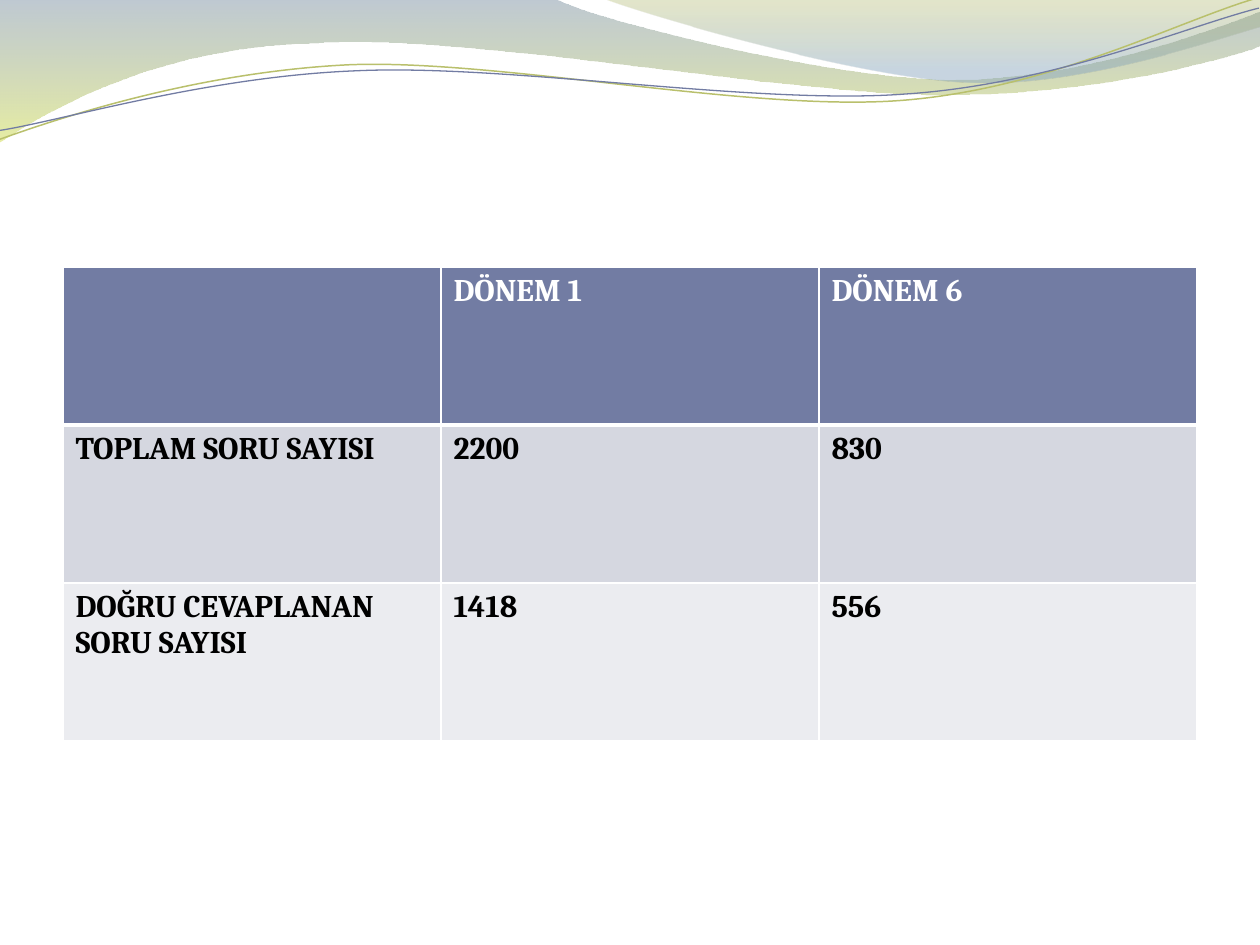
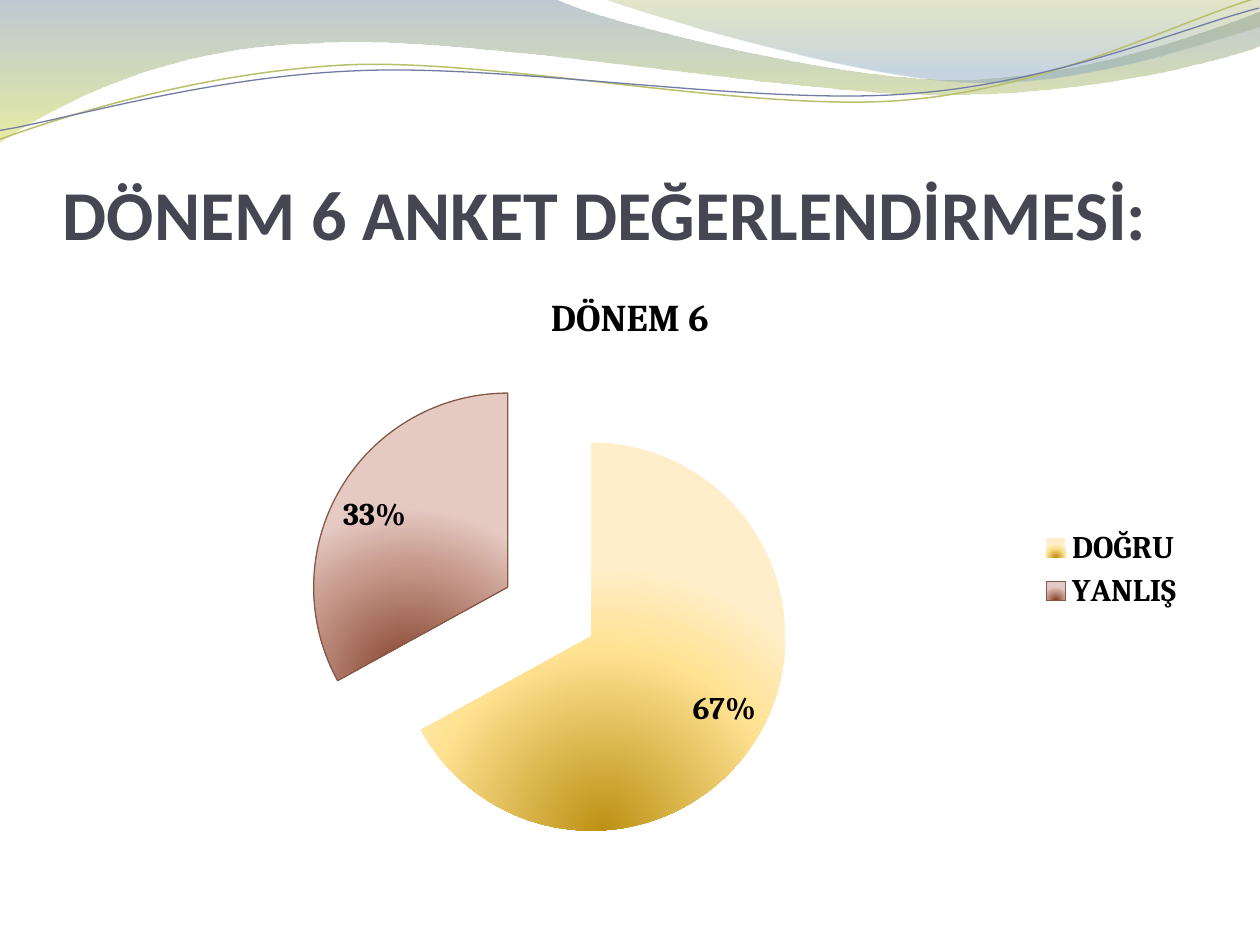
from lxml.etree import SubElement
from pptx import Presentation
from pptx.chart.data import CategoryChartData
from pptx.dml.color import RGBColor
from pptx.enum.chart import XL_CHART_TYPE, XL_LABEL_POSITION, XL_LEGEND_POSITION
from pptx.enum.text import MSO_ANCHOR
from pptx.oxml.ns import qn
from pptx.util import Inches, Pt

COLORS = {
    "white": "FFFFFF", "black": "000000", "title": "464653",
    "blue": "727CA3", "olive": "B9C06C", "row_dark": "D5D7E0", "row_light": "EBECF0",
    "outline": "875848",
}
TITLE_FONT, BODY_FONT = "Calibri", "Cambria"
COLUMNS, ROWS = 10, 7.5
LEFT, WIDTH, BODY_TOP = 0.5, 9, 2.12
WAVE_TILT = 357.3

BANDS = [
    ([(0, 0), (4.4, -0.01), (4.76, 0.17, 6.64, 0.63, 7.58, 0.63),
      (8.53, 0.63, 9.58, 0.26, 10, 0.09), (10.01, 0.36),
      (9.83, 0.44, 8.7, 0.76, 7.46, 0.75), (6.22, 0.75, 3.82, 0.28, 2.57, 0.34),
      (1.29, 0.36, 0.46, 0.83, -0.01, 1.13), (0, 0)],
     [(0, "72889B", 45), (100, "D3DE57", 55)]),
    ([(4.79, -0.01), (5.09, 0.11, 6.82, 0.62, 7.69, 0.65),
      (8.56, 0.69, 9.61, 0.32, 10, 0.21), (10, 0), (4.79, -0.01)],
     [(0, "A4AC50", 30), (80, "84A3BD", 45)]),
]
WAVES = [
    ([(-0.02, 0.87), (0.47, 0.72, 1.58, 0.41, 2.78, 0.41),
      (3.96, 0.42, 5.91, 0.93, 7.12, 0.9), (8.32, 0.87, 9.4, 0.36, 10, 0.22)],
     "olive", 0.85),
    ([(-0.02, 0.8), (0.46, 0.75, 1.64, 0.45, 2.83, 0.46),
      (4.03, 0.46, 5.96, 0.88, 7.16, 0.85), (8.35, 0.83, 9.42, 0.42, 10.01, 0.3)],
     "blue", 0.75),
]
SLICES = [
    ([(0, "BC9113", 100), (68, "FFE292", 100), (100, "FFEEC9", 100)], None),
    ([(0, "813D26", 100), (68, "C89B8E", 100), (100, "E5CAC3", 100)], "outline"),
]


def color(name):
    """Return the named colour."""
    return RGBColor.from_string(COLORS[name])


def set_font(font, size, name, shade):
    """Apply the bold style that every text here shares."""
    font.size, font.name, font.bold = Pt(size), name, True
    font.color.rgb = color(shade)


def set_gradient(fill, element, stops, circle=False):
    """Fill an element with a downward or a circular gradient."""
    fill.solid()
    solid = next(element.iter(qn("a:solidFill")))
    gradient = SubElement(solid.getparent(), qn("a:gradFill"), rotWithShape="1")
    solid.getparent().replace(solid, gradient)
    stop_list = SubElement(gradient, qn("a:gsLst"))
    for position, shade, opacity in stops:
        stop = SubElement(stop_list, qn("a:gs"), pos=str(position * 1000))
        tone = SubElement(stop, qn("a:srgbClr"), val=shade)
        if opacity < 100:
            SubElement(tone, qn("a:alpha"), val=str(opacity * 1000))
    if circle:
        center = SubElement(gradient, qn("a:path"))
        center.set("path", "circle")
        SubElement(center, qn("a:fillToRect"), l="50000", t="130000", r="50000", b="-30000")
    else:
        SubElement(gradient, qn("a:lin"), ang="5400000", scaled="1")


def bend(shape, segments):
    """Join every three lines that stand for a curve into one Bézier segment."""
    outline = next(shape.element.iter(qn("a:path")))
    lines = iter(outline.findall(qn("a:lnTo")))
    for segment in segments:
        parts = [next(lines) for _ in range(len(segment) // 2)]
        if len(parts) == 3:
            curve = SubElement(outline, qn("a:cubicBezTo"))
            parts[0].addprevious(curve)
            for part in parts:
                curve.append(part[0])
                outline.remove(part)


class Deck:
    """Hold the style and the current slide of the deck."""

    def __init__(self):
        """Start an empty deck."""
        self.deck = Presentation()
        self.deck.slide_width, self.deck.slide_height = Inches(COLUMNS), Inches(ROWS)
        self.page = None

    def grid(self, *cells):
        """Convert grid columns or rows to lengths."""
        return [round(cell * self.deck.slide_width / COLUMNS) for cell in cells]

    def add_page(self):
        """Add a slide with the shared bands and waves."""
        self.page = self.deck.slides.add_slide(self.deck.slide_layouts[6])
        for segments, stops in BANDS:
            band = self.outline(segments, True)
            set_gradient(band.fill, band.element.spPr, stops)
            band.line.fill.background()
        for segments, shade, width in WAVES:
            wave = self.outline(segments, False)
            wave.rotation = WAVE_TILT
            wave.fill.background()
            wave.line.color.rgb = color(shade)
            wave.line.width = Pt(width)

    def outline(self, segments, closed):
        """Draw a freeform from line and Bézier segments."""
        points = [self.grid(*segment[start:start + 2])
                  for segment in segments for start in range(0, len(segment), 2)]
        builder = self.page.shapes.build_freeform(*points[0])
        builder.add_line_segments(points[1:], close=closed)
        shape = builder.convert_to_shape()
        shape.shadow.inherit = False
        bend(shape, segments[1:])
        return shape

    def title(self, text):
        """Add the slide title."""
        box = self.page.shapes.add_textbox(*self.grid(LEFT, 0.77, WIDTH, 1.25))
        frame = box.text_frame
        frame.word_wrap, frame.vertical_anchor = True, MSO_ANCHOR.BOTTOM
        frame.margin_left = frame.margin_right = frame.margin_bottom = 0
        frame.text = text
        set_font(frame.paragraphs[0].runs[0].font, 40, TITLE_FONT, "title")

    def table(self, rows, height):
        """Add a table with a header row and tinted body rows."""
        frame = self.page.shapes.add_table(
            len(rows), len(rows[0]), *self.grid(LEFT, BODY_TOP, WIDTH, height))
        fills = ["blue", "row_dark", "row_light"]
        for row, texts in enumerate(rows):
            for column, text in enumerate(texts):
                cell = frame.table.cell(row, column)
                if row == 0:
                    self.borders(cell, {"B": 3})
                cell.fill.solid()
                cell.fill.fore_color.rgb = color(fills[row])
                if text:
                    cell.text = text
                for span in cell.text_frame.paragraphs[0].runs:
                    set_font(span.font, 18, BODY_FONT, "black" if row else "white")

    def borders(self, cell, widths):
        """Give a cell white borders, one point wide unless stated."""
        properties = cell._tc.get_or_add_tcPr()
        for side in "LRTB":
            line = SubElement(properties, qn(f"a:ln{side}"), w=str(Pt(widths.get(side, 1))))
            SubElement(SubElement(line, qn("a:solidFill")), qn("a:srgbClr"),
                       val=COLORS["white"])

    def pie(self, name, values, height):
        """Add an exploded pie chart with percentages and a legend."""
        data = CategoryChartData(number_format="0%")
        data.categories = list(values)
        data.add_series(name, values.values())
        chart = self.page.shapes.add_chart(
            XL_CHART_TYPE.PIE, *self.grid(LEFT, BODY_TOP, WIDTH, height), data).chart
        set_font(chart.font, 18, BODY_FONT, "black")
        chart.has_title = True
        chart.chart_title.text_frame.text = name
        heading = chart.chart_title.text_frame.paragraphs[0].runs[0]
        set_font(heading.font, 21.6, BODY_FONT, "black")
        chart.has_legend = True
        chart.legend.position = XL_LEGEND_POSITION.RIGHT
        chart.legend.include_in_layout = False
        set_font(chart.legend.font, 18, BODY_FONT, "black")

        plot = chart.plots[0]
        plot.vary_by_categories = True
        series = plot.series[0]
        for index, (stops, edge) in enumerate(SLICES):
            look = series.points[index].format
            set_gradient(look.fill, look._element, stops, circle=True)
            if edge:
                look.line.color.rgb = color(edge)
                look.line.width = Pt(0.75)
            else:
                look.line.fill.background()
        explosion = SubElement(series._element, qn("c:explosion"), val="25")
        series._element.find(qn("c:tx")).addnext(explosion)

        labels = series.data_labels
        labels.show_value = True
        labels.number_format, labels.number_format_is_linked = "0%", False
        labels.position = XL_LABEL_POSITION.BEST_FIT
        set_font(labels.font, 18, BODY_FONT, "black")


def main():
    """Build and save the deck."""
    deck = Deck()
    deck.add_page()
    deck.table([
        ["", "DÖNEM 1", "DÖNEM 6"],
        ["TOPLAM SORU SAYISI", "2200", "830"],
        ["DOĞRU CEVAPLANAN SORU SAYISI", "1418", "556"],
    ], 3.76)
    deck.add_page()
    deck.title("DÖNEM 6 ANKET DEĞERLENDİRMESİ:")
    deck.pie("DÖNEM 6", {"DOĞRU": 0.67, "YANLIŞ": 0.33}, 4.8)
    deck.deck.save("out.pptx")


if __name__ == "__main__":
    main()
